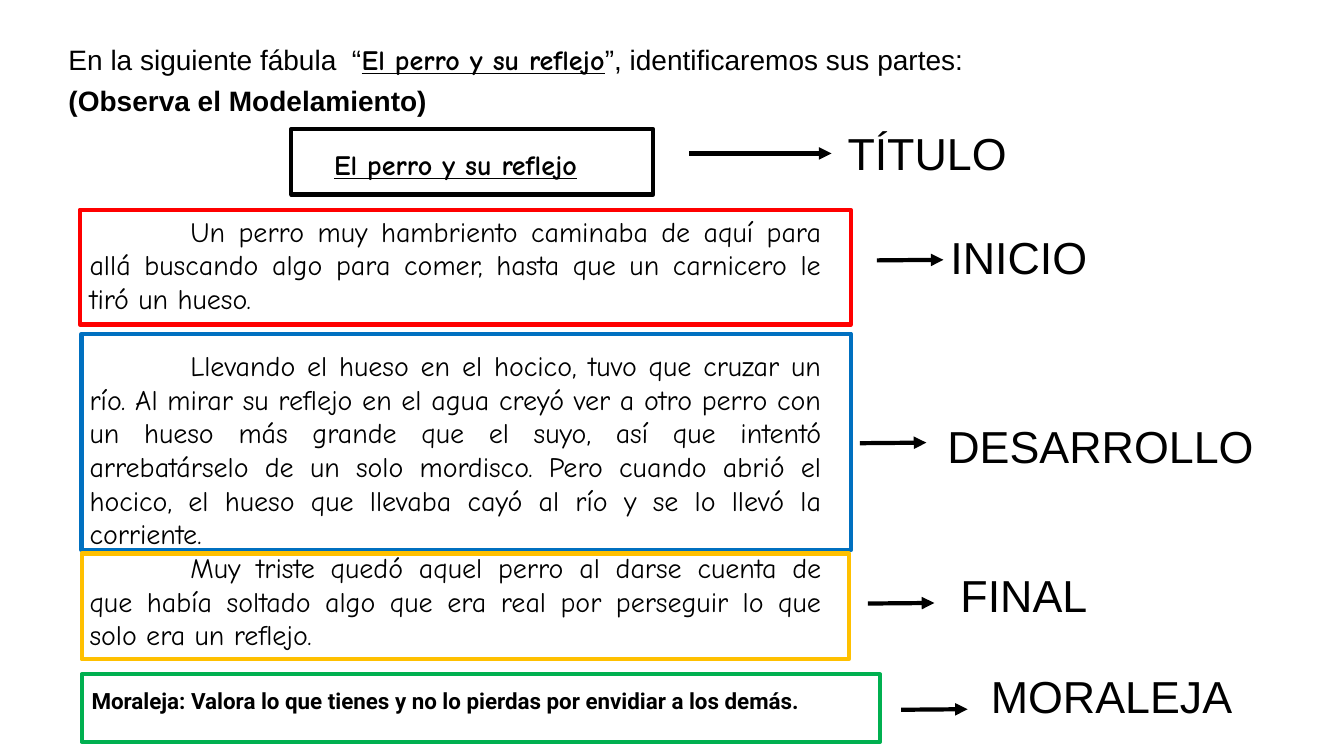
from lxml import etree
from pptx import Presentation
from pptx.dml.color import RGBColor
from pptx.enum.shapes import MSO_CONNECTOR, MSO_SHAPE
from pptx.enum.text import PP_ALIGN
from pptx.oxml.ns import qn
from pptx.util import Pt

RECTANGLE = MSO_SHAPE.RECTANGLE
STRAIGHT = MSO_CONNECTOR.STRAIGHT
LEFT, CENTER, JUSTIFY = PP_ALIGN.LEFT, PP_ALIGN.CENTER, PP_ALIGN.JUSTIFY
BLACK = "000000"
LINE_WIDTH = 3
LABEL_HEIGHT = 46.1
FIRST_LINE_INDENT = 72

BODY = {"name": "Arial", "size": Pt(20)}
BOLD = {**BODY, "bold": True}
LABEL = {"name": "Arial", "size": Pt(32)}
STORY = {"name": "Comic Neue", "size": Pt(20)}
STORY_TITLE = {**STORY, "bold": True, "underline": True}
MORAL = {"name": "Roboto", "size": Pt(16), "bold": True}


def paint(color_format, hex_color):
    color_format.rgb = RGBColor.from_string(hex_color)


def add_text(box, paragraphs, wrap=True):
    shape = slide.shapes.add_textbox(*map(Pt, box))
    frame = shape.text_frame
    frame.word_wrap = wrap
    for index, (layout, runs) in enumerate(paragraphs):
        paragraph = frame.add_paragraph() if index else frame.paragraphs[0]
        for attribute, value in layout.items():
            setattr(paragraph, attribute, value)
        if layout.get("alignment") == JUSTIFY:
            properties = paragraph._p.get_or_add_pPr()
            properties.set("marL", "0")
            properties.set("indent", str(Pt(FIRST_LINE_INDENT)))
        for text, font_format in runs:
            run = paragraph.add_run()
            run.text = text
            for attribute, value in font_format.items():
                setattr(run.font, attribute, value)
            paint(run.font.color, BLACK)


presentation = Presentation()
presentation.slide_width = Pt(960)
presentation.slide_height = Pt(540)
slide = presentation.slides.add_slide(presentation.slide_layouts[6])

heading = {"alignment": LEFT, "line_spacing": 1.15, "space_after": Pt(2)}
add_text((41.8, 23, 802.8, 86.4), [
    (heading, [
        ("En la siguiente fábula  “", BODY),
        ("El perro y su reflejo", STORY_TITLE),
        ("”, identificaremos sus partes:", BODY),
    ]),
    (heading, [("(Observa el Modelamiento)", BOLD)]),
])

# label, frame colour, frame box, arrow (left, top, length, rise), label (left, top, width)
fable_parts = [
    ("TÍTULO", BLACK, (208.1, 92.2, 258.5, 46.8), (492.5, 109.6, 101.5, 0), (598.3, 86.4, 129.6)),
    ("INICIO", "FF0000", (56.9, 149.8, 550.8, 82.1), (626.4, 186, 47.5, 0.4), (671.8, 160.6, 113)),
    ("DESARROLLO", "0070C0", (58.3, 238.3, 549.4, 154.8), (614.2, 316.6, 47.5, 0.4), (669.6, 295.9, 240.5)),
    ("FINAL", "FFC000", (58.3, 395.3, 547.9, 75.6), (619.9, 431.1, 47.5, 0.4), (679, 401.8, 105.8)),
    ("MORALEJA", "00B050", (58.3, 481.7, 570.2, 48.2), (643.7, 507, 47.5, 0.4), (700.6, 473.8, 188.6)),
]
for label, color, box, (left, top, length, rise), label_box in fable_parts:
    shape = slide.shapes.add_shape(RECTANGLE, *map(Pt, box))
    shape.shadow.inherit = False
    shape.fill.background()
    paint(shape.line.color, color)
    shape.line.width = Pt(LINE_WIDTH)

    arrow = slide.shapes.add_connector(STRAIGHT, *map(Pt, (left, top, left + length, top - rise)))
    paint(arrow.line.color, BLACK)
    arrow.line.width = Pt(LINE_WIDTH)
    etree.SubElement(arrow.line._get_or_add_ln(), qn("a:tailEnd"), type="triangle")
    etree.SubElement(arrow._element.spPr, qn("a:effectLst"))

    add_text((*label_box, LABEL_HEIGHT), [({}, [(label, LABEL)])], wrap=False)

spaced = {"alignment": JUSTIFY, "space_before": Pt(24)}
add_text((56.9, 101.5, 537.1, 370.8), [
    ({"alignment": CENTER}, [("El perro y su reflejo", STORY_TITLE)]),
    (spaced, [(
        "Un perro muy hambriento caminaba de aquí para allá buscando algo para comer, "
        "hasta que un carnicero le tiró un hueso.", STORY)]),
    (spaced, [(
        "Llevando el hueso en el hocico, tuvo que cruzar un río. Al mirar su reflejo en el agua "
        "creyó ver a otro perro con un hueso más grande que el suyo, así que intentó "
        "arrebatárselo de un solo mordisco. Pero cuando abrió el hocico, el hueso que llevaba "
        "cayó al río y se lo llevó la corriente.", STORY)]),
    ({"alignment": JUSTIFY}, [(
        "Muy triste quedó aquel perro al darse cuenta de que había soltado algo que era real "
        "por perseguir lo que solo era un reflejo.", STORY)]),
])

add_text((58.3, 487.4, 797, 26.6), [
    ({}, [("Moraleja: Valora lo que tienes y no lo pierdas por envidiar a los demás.", MORAL)]),
])

presentation.save("out.pptx")
